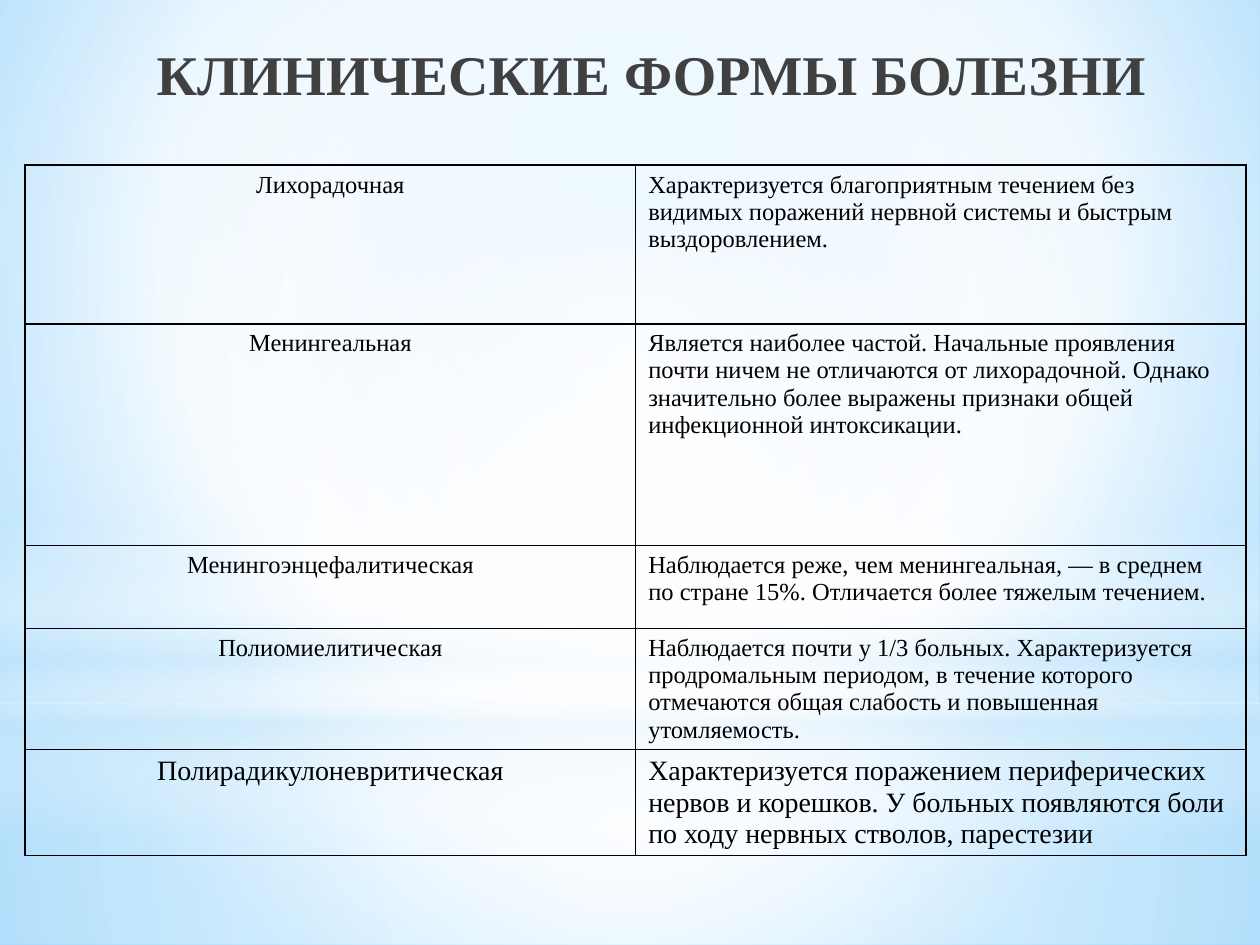
import dataclasses

import lxml.etree
import pptx
import pptx.dml.color
import pptx.enum.shapes
import pptx.enum.text
import pptx.oxml
import pptx.oxml.ns
import pptx.util

Inches = pptx.util.Inches
Align = pptx.enum.text.PP_ALIGN
Kind = pptx.enum.shapes.MSO_SHAPE
qn = pptx.oxml.ns.qn


@dataclasses.dataclass(frozen=True)
class Theme:
    font: str = "Times New Roman"
    ink: str = "000000"
    head: str = "404040"
    white: str = "FFFFFF"
    pale: str = "C6E7FC"
    sky: str = "B0E0FF"
    blue: str = "6BC5FF"
    title: int = 32
    body: int = 14
    large: int = 16
    rule: int = 1


def write(frame, text, size, color, font, bold=False, align=Align.LEFT):
    para = frame.paragraphs[0]
    para.alignment = align
    run = para.add_run()
    run.text = text
    run.font.size = pptx.util.Pt(size)
    run.font.name = font
    run.font.bold = bold
    run.font.color.rgb = pptx.dml.color.RGBColor.from_string(color)


def blend(props, stops, focus=None):
    old = props.find(qn("a:solidFill"))
    grad = lxml.etree.Element(qn("a:gradFill"), rotWithShape="1")
    items = lxml.etree.SubElement(grad, qn("a:gsLst"))
    for place, color, alpha in stops:
        stop = lxml.etree.SubElement(items, qn("a:gs"), pos=str(place * 1000))
        tint = lxml.etree.SubElement(stop, qn("a:srgbClr"), val=color)
        if alpha < 100:
            lxml.etree.SubElement(tint, qn("a:alpha"), val=str(alpha * 1000))
    if focus:
        way = lxml.etree.SubElement(grad, qn("a:path"))
        way.set("path", "circle")
        sides = {side: str(part * 1000) for side, part in zip("ltrb", focus)}
        lxml.etree.SubElement(way, qn("a:fillToRect"), sides)
    else:
        lxml.etree.SubElement(grad, qn("a:lin"), ang="5400000", scaled="0")
    props.replace(old, grad)


class Deck:
    def __init__(self, theme):
        self.theme = theme
        self.file = pptx.Presentation()
        self.file.slide_width = Inches(10)
        self.file.slide_height = Inches(7.5)
        self.slide = self.file.slides.add_slide(self.file.slide_layouts[5])

    def ground(self, stops, focus):
        self.slide.background.fill.solid()
        blend(self.slide.element.find(".//" + qn("p:bgPr")), stops, focus)

    def glow(self, kind, top, height, stops, focus=None):
        shape = self.slide.shapes.add_shape(
            kind, 0, Inches(top), Inches(10), Inches(height))
        shape.shadow.inherit = False
        shape.line.fill.background()
        shape.fill.solid()
        blend(shape.element.spPr, stops, focus)

    def title(self, text):
        shape = self.slide.shapes.title
        shape.element.getparent().append(shape.element)
        shape.left, shape.top = Inches(0.67), Inches(0.21)
        shape.width, shape.height = Inches(9), Inches(0.85)
        frame = shape.text_frame
        frame.word_wrap = True
        frame.auto_size = pptx.enum.text.MSO_AUTO_SIZE.NONE
        frame.vertical_anchor = pptx.enum.text.MSO_ANCHOR.TOP
        frame.margin_top = Inches(0.1)
        write(frame, text, self.theme.title, self.theme.head,
              self.theme.font, bold=True, align=Align.CENTER)

    def frame(self, cell):
        cell.fill.background()
        props = cell._tc.get_or_add_tcPr()
        width = str(pptx.util.Pt(self.theme.rule))
        for index, side in enumerate("LRTB"):
            line = lxml.etree.Element(qn("a:ln" + side), w=width)
            fill = lxml.etree.SubElement(line, qn("a:solidFill"))
            lxml.etree.SubElement(fill, qn("a:srgbClr"), val=self.theme.ink)
            props.insert(index, line)

    def table(self, rows):
        total = sum(row[0] for row in rows)
        table = self.slide.shapes.add_table(
            len(rows), 2, Inches(0.2), Inches(1.31),
            Inches(9.69), Inches(total)).table
        table.first_row = table.horz_banding = False
        for line, (height, size, *texts) in zip(table.rows, rows):
            line.height = Inches(height)
            for cell, text, align in zip(
                    line.cells, texts, (Align.CENTER, Align.LEFT)):
                self.frame(cell)
                write(cell.text_frame, text, size, self.theme.ink,
                      self.theme.font, align=align)


def main():
    theme = Theme()
    deck = Deck(theme)
    white, pale = theme.white, theme.pale
    mid = (50, 50, 50, 50)
    deck.ground([(0, theme.sky, 100), (60, white, 100),
                 (100, theme.blue, 100)], (20, 10, 20, 60))
    deck.glow(Kind.RECTANGLE, 5.58, 1.92,
              [(0, white, 91), (37, white, 76), (100, pale, 79)], mid)
    deck.glow(Kind.RECTANGLE, 0, 5.58,
              [(0, white, 89), (48, white, 62), (100, pale, 79)], mid)
    deck.glow(Kind.RECTANGLE, 4.12, 2.5,
              [(0, white, 0), (29, white, 30), (45, pale, 40),
               (55, white, 26), (65, pale, 60), (100, white, 0)])
    deck.glow(Kind.OVAL, 1.75, 5.58,
              [(0, white, 100), (56, white, 0)], mid)
    deck.title("КЛИНИЧЕСКИЕ ФОРМЫ БОЛЕЗНИ")
    deck.table([
        (1.26, theme.body, "Лихорадочная",
         "Характеризуется благоприятным течением без видимых поражений "
         "нервной системы и быстрым выздоровлением."),
        (1.76, theme.body, "Менингеальная",
         "Является наиболее частой. Начальные проявления почти ничем не "
         "отличаются от лихорадочной. Однако значительно более выражены "
         "признаки общей инфекционной интоксикации."),
        (0.66, theme.body, "Менингоэнцефалитическая",
         "Наблюдается реже, чем менингеальная, — в среднем по стране 15%. "
         "Отличается более тяжелым течением."),
        (0.96, theme.body, "Полиомиелитическая",
         "Наблюдается почти у 1/3 больных. Характеризуется продромальным "
         "периодом, в течение которого отмечаются общая слабость и "
         "повышенная утомляемость."),
        (0.84, theme.large, "Полирадикулоневритическая",
         "Характеризуется поражением периферических нервов и корешков. "
         "У больных появляются боли по ходу нервных стволов, парестезии"),
    ])
    deck.file.save("out.pptx")


if __name__ == "__main__":
    main()
